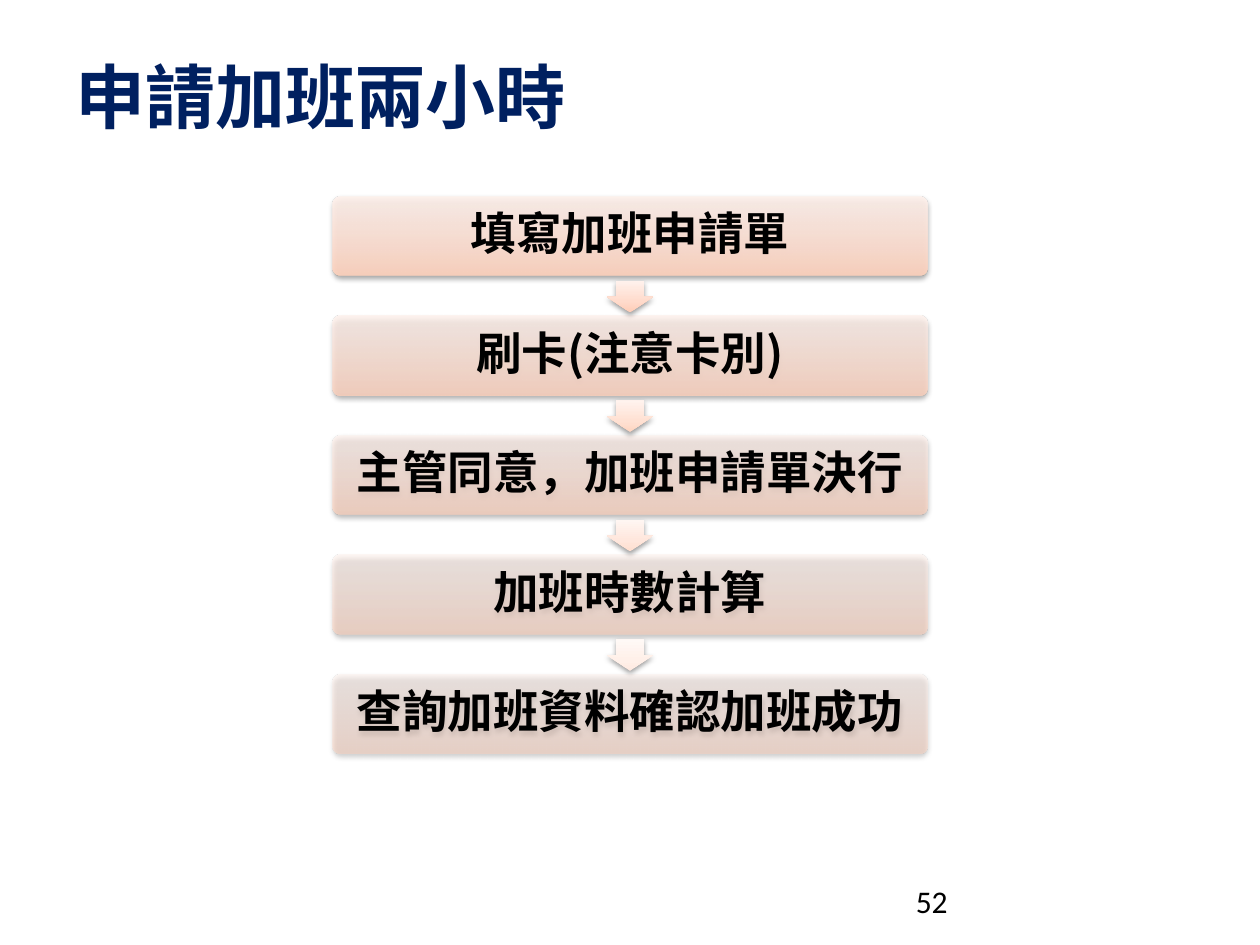
import pptx
import pptx.util
import pptx.dml.color
import pptx.enum.shapes
import pptx.enum.text
import pptx.oxml
import pptx.oxml.ns

SHAPES = pptx.enum.shapes.MSO_SHAPE
ALIGN = pptx.enum.text.PP_ALIGN
ANCHOR = pptx.enum.text.MSO_ANCHOR
CJK = "Noto Sans CJK SC"
STEPS = ["填寫加班申請單", "刷卡(注意卡別)", "主管同意，加班申請單決行",
         "加班時數計算", "查詢加班資料確認加班成功"]
BAR_COLORS = ["FFD2BD", "FFDED0", "FFF2ED"]
ARROW_COLORS = [["FFCDB7", "FFDBCC", "FFF1EC"], ["FFD5C1", "FFE1D3", "FFF3EE"],
                ["FFDECF", "FFE7DD", "FFF6F2"], ["FFEAE1", "FFF0E9", "FFF9F6"]]


def color(value):
    return pptx.dml.color.RGBColor.from_string(value)


def apply(target, values):
    for name, value in values.items():
        setattr(target, name, value)


class FlowPage:
    """Current slide, measured on a grid of 100 columns by 75 rows."""

    def __init__(self, deck):
        self.column = deck.slide_width / 100
        self.row = deck.slide_height / 75
        self.page = deck.slides.add_slide(deck.slide_layouts[5])

    def place(self, left, top, width, height):
        return [round(left * self.column), round(top * self.row),
                round(width * self.column), round(height * self.row)]

    def fill_text(self, box, text, size, ink, font=CJK, bold=False, align=ALIGN.LEFT,
                  spacing=None, anchor=ANCHOR.TOP, inset=0.1):
        frame = box.text_frame
        margin = pptx.util.Inches(inset)
        apply(frame, {"word_wrap": True, "vertical_anchor": anchor,
                      "auto_size": pptx.enum.text.MSO_AUTO_SIZE.NONE,
                      "margin_left": margin, "margin_right": margin})
        para = frame.paragraphs[0]
        apply(para, {"alignment": align, "line_spacing": spacing})
        span = para.add_run()
        span.text = text
        apply(span.font, {"name": font, "size": pptx.util.Pt(size), "bold": bold})
        span.font.color.rgb = color(ink)
        # East Asian text takes its own typeface element
        latin = span.font._element.find(pptx.oxml.ns.qn("a:latin"))
        latin.addnext(pptx.oxml.parse_xml(
            f'<a:ea {pptx.oxml.ns.nsdecls("a")} typeface="{font}"/>'))

    def title(self, text, area, **style):
        box = self.page.shapes.title
        apply(box, dict(zip(["left", "top", "width", "height"], self.place(*area))))
        self.fill_text(box, text, anchor=ANCHOR.MIDDLE, **style)

    def label(self, text, area, **style):
        self.fill_text(self.page.shapes.add_textbox(*self.place(*area)), text, **style)

    def shaded(self, kind, area, adjustments, colors, alpha=100):
        """Preset shape with an upward gradient and a soft shadow below."""
        shape = self.page.shapes.add_shape(kind, *self.place(*area))
        for index, value in enumerate(adjustments):
            shape.adjustments[index] = value
        shape.line.fill.background()
        names = pptx.oxml.ns.nsdecls("a")
        stops = "".join(
            f'<a:gs pos="{position}000"><a:srgbClr val="{value}">'
            f'<a:alpha val="{alpha}000"/></a:srgbClr></a:gs>'
            for position, value in zip([0, 35, 100], colors))
        outline = shape._element.spPr.find(pptx.oxml.ns.qn("a:ln"))
        outline.addprevious(pptx.oxml.parse_xml(
            f'<a:gradFill {names} rotWithShape="0"><a:gsLst>{stops}</a:gsLst>'
            '<a:lin ang="16200000" scaled="0"/></a:gradFill>'))
        outline.addnext(pptx.oxml.parse_xml(
            f'<a:effectLst {names}><a:outerShdw blurRad="39400" dist="20000" '
            'dir="5400000" rotWithShape="0"><a:srgbClr val="000000">'
            '<a:alpha val="38000"/></a:srgbClr></a:outerShdw></a:effectLst>'))
        return shape

    def step(self, text, area, alpha):
        bar = self.shaded(SHAPES.ROUNDED_RECTANGLE, area, [0.1], BAR_COLORS, alpha)
        self.fill_text(bar, text, 26, "000000", bold=True, align=ALIGN.CENTER,
                       spacing=0.9, anchor=ANCHOR.MIDDLE, inset=0.11)

    def down_arrow(self, area, colors):
        arrow = self.shaded(SHAPES.RIGHT_ARROW, area, [0.6, 0.5], colors)
        arrow.rotation = 90


def main():
    deck = pptx.Presentation()
    deck.slide_width = pptx.util.Inches(10)
    deck.slide_height = pptx.util.Inches(7.5)
    flow = FlowPage(deck)

    # Heading
    flow.title("申請加班兩小時", (5, 3.6, 82.5, 7.9), size=40, ink="002060", bold=True)

    # Steps, each fainter than the one before, with arrows between
    top, pitch = 15.6, 9.48
    for index, text in enumerate(STEPS):
        flow.step(text, (26.4, top + index * pitch, 47.2, 6.3), 90 - 10 * index)
    for index, colors in enumerate(ARROW_COLORS):
        flow.down_arrow((48.75, top + 6.1 + index * pitch, 2.5, 3.7), colors)

    # Page number
    flow.label("52", (71.7, 69.5, 23.3, 4), size=18, ink="000000", font="Calibri")

    deck.save("out.pptx")


if __name__ == "__main__":
    main()
